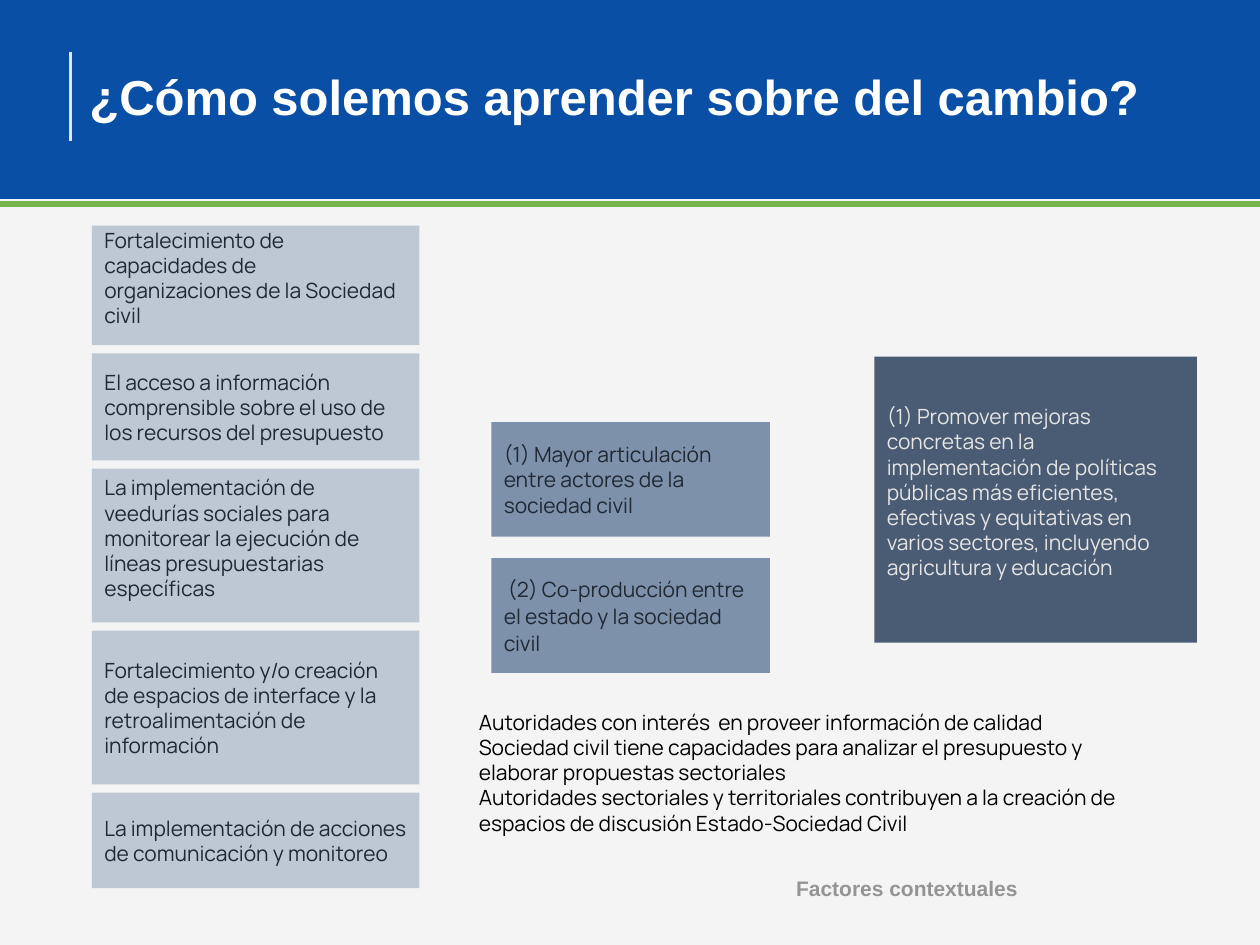
from pptx import Presentation
from pptx.dml.color import RGBColor
from pptx.enum.shapes import MSO_CONNECTOR, MSO_SHAPE
from pptx.enum.text import MSO_ANCHOR, MSO_AUTO_SIZE, PP_ALIGN
from pptx.oxml.ns import qn
from pptx.util import Inches, Pt
from lxml.etree import SubElement

# Content
TITLE = "¿Cómo solemos aprender sobre del cambio?"
# Actions: text, height, extra bottom inset
ACTIONS = [
    ("Fortalecimiento de capacidades de organizaciones de la Sociedad civil", 0.95, 0.12),
    ("El acceso a información comprensible sobre el uso de los recursos del presupuesto", 0.85, 0),
    ("La implementación de veedurías sociales para monitorear la ejecución de líneas "
     "presupuestarias específicas", 1.22, 0.12),
    ("Fortalecimiento y/o creación de espacios de interface y la retroalimentación de "
     "información", 1.22, 0),
    ("La implementación de acciones de comunicación y monitoreo", 0.76, 0),
]
# Outcomes: text, line spacing, space after
OUTCOMES = [
    ("(1) Mayor articulación entre actores de la sociedad civil", 1.0, 0),
    (" (2) Co-producción entre el estado y la sociedad civil", 1.07, 4),
]
GOAL = ("(1) Promover mejoras concretas en la implementación de políticas públicas más "
        "eficientes, efectivas y equitativas en varios sectores, incluyendo agricultura "
        "y educación")
CONTEXT = [
    "Autoridades con interés  en proveer información de calidad",
    "Sociedad civil tiene capacidades para analizar el presupuesto y elaborar propuestas "
    "sectoriales",
    "Autoridades sectoriales y territoriales contribuyen a la creación de espacios de "
    "discusión Estado-Sociedad Civil",
]
CONTEXT_LABEL = "Factores contextuales"

THEME = {
    "heading_font": "Arial", "body_font": "Manrope",
    "title_size": 28, "body_size": 12,
    "background": "F4F4F4", "band": "0A4FA6", "rule": "73B54B", "accent": "E5E5E5",
    "action": "BEC8D5", "outcome": "7D91AB", "goal": "4A5C73",
    "dark": "202832", "light": "E5E5E5", "white": "FFFFFF", "black": "000000",
    "muted": "949494",
}


def color(name):
    return RGBColor.from_string(THEME[name])


def style(paragraph, ink, font="body_font", size="body_size", bold=False):
    paragraph.alignment = PP_ALIGN.LEFT
    paragraph.font.name = THEME[font]
    paragraph.font.size = Pt(THEME[size])
    paragraph.font.bold = bold
    paragraph.font.color.rgb = color(ink)


def place(part, left, top, width, height):
    part.left, part.top = Inches(left), Inches(top)
    part.width, part.height = Inches(width), Inches(height)


def add_box(slide, fill, left, top, width, height, text="", ink="dark", extra_bottom=0):
    box = slide.shapes.add_shape(MSO_SHAPE.RECTANGLE, Inches(left), Inches(top),
                                 Inches(width), Inches(height))
    box.shadow.inherit = False
    box.fill.solid()
    box.fill.fore_color.rgb = color(fill)
    box.line.fill.background()
    if text:
        frame = box.text_frame
        frame.word_wrap = True
        frame.vertical_anchor = MSO_ANCHOR.MIDDLE
        frame.margin_bottom = Inches(0.05 + extra_bottom)
        frame.text = text
        style(frame.paragraphs[0], ink)
    return box


def add_line(slide, ink, weight, x1, y1, x2, y2):
    line = slide.shapes.add_connector(MSO_CONNECTOR.STRAIGHT, Inches(x1), Inches(y1),
                                      Inches(x2), Inches(y2))
    line.line.color.rgb = color(ink)
    line.line.width = Pt(weight)
    SubElement(line._element.spPr, qn("a:effectLst"))


def main():
    deck = Presentation()
    deck.slide_width, deck.slide_height = Inches(10), Inches(7.5)
    slide = deck.slides.add_slide(deck.slide_layouts[1])
    slide.background.fill.solid()
    slide.background.fill.fore_color.rgb = color("background")
    title, context = slide.placeholders

    # Header band, behind the title
    band = add_box(slide, "band", 0, -0.05, 10, 1.63)
    title._element.addprevious(band._element)
    add_line(slide, "rule", 3, 0, 1.62, 10, 1.62)
    add_line(slide, "accent", 2, 0.56, 0.41, 0.56, 1.12)

    # Title
    place(title, 0.66, 0.45, 9.18, 0.63)
    heading = title.text_frame
    heading.auto_size = MSO_AUTO_SIZE.NONE
    heading.vertical_anchor = MSO_ANCHOR.MIDDLE
    heading.margin_left = heading.margin_right = Inches(0.05)
    heading.text = TITLE
    style(heading.paragraphs[0], "white", "heading_font", "title_size", True)

    # Column of actions, evenly spaced between top and bottom
    top, bottom = 1.79, 7.05
    gap = (bottom - top - sum(height for _, height, _ in ACTIONS)) / (len(ACTIONS) - 1)
    for text, height, extra_bottom in ACTIONS:
        add_box(slide, "action", 0.73, top, 2.6, height, text, extra_bottom=extra_bottom)
        top += height + gap

    # Outcomes and goal
    for row, (text, spacing, after) in enumerate(OUTCOMES):
        outcome = add_box(slide, "outcome", 3.9, 3.35 + row * 1.08, 2.21, 0.91, text)
        paragraph = outcome.text_frame.paragraphs[0]
        paragraph.line_spacing = spacing
        paragraph.space_after = Pt(after)
    add_box(slide, "goal", 6.94, 2.83, 2.56, 2.27, GOAL, "light", 0.12)

    # Contextual factors
    place(context, 3.7, 5.58, 5.31, 1.31)
    factors = context.text_frame
    factors.auto_size = MSO_AUTO_SIZE.NONE
    factors.text = "\n".join(CONTEXT)
    for paragraph in factors.paragraphs:
        properties = paragraph._p.get_or_add_pPr()
        properties.set("marL", "0")
        properties.set("indent", "0")
        SubElement(properties, qn("a:buNone"))
        paragraph.space_before = Pt(0)
        style(paragraph, "black")

    label = slide.shapes.add_textbox(Inches(6.22), Inches(6.9), Inches(2.79), Inches(0.3))
    label.text_frame.word_wrap = True
    label.text_frame.text = CONTEXT_LABEL
    style(label.text_frame.paragraphs[0], "muted", "heading_font", bold=True)

    deck.save("out.pptx")


if __name__ == "__main__":
    main()
